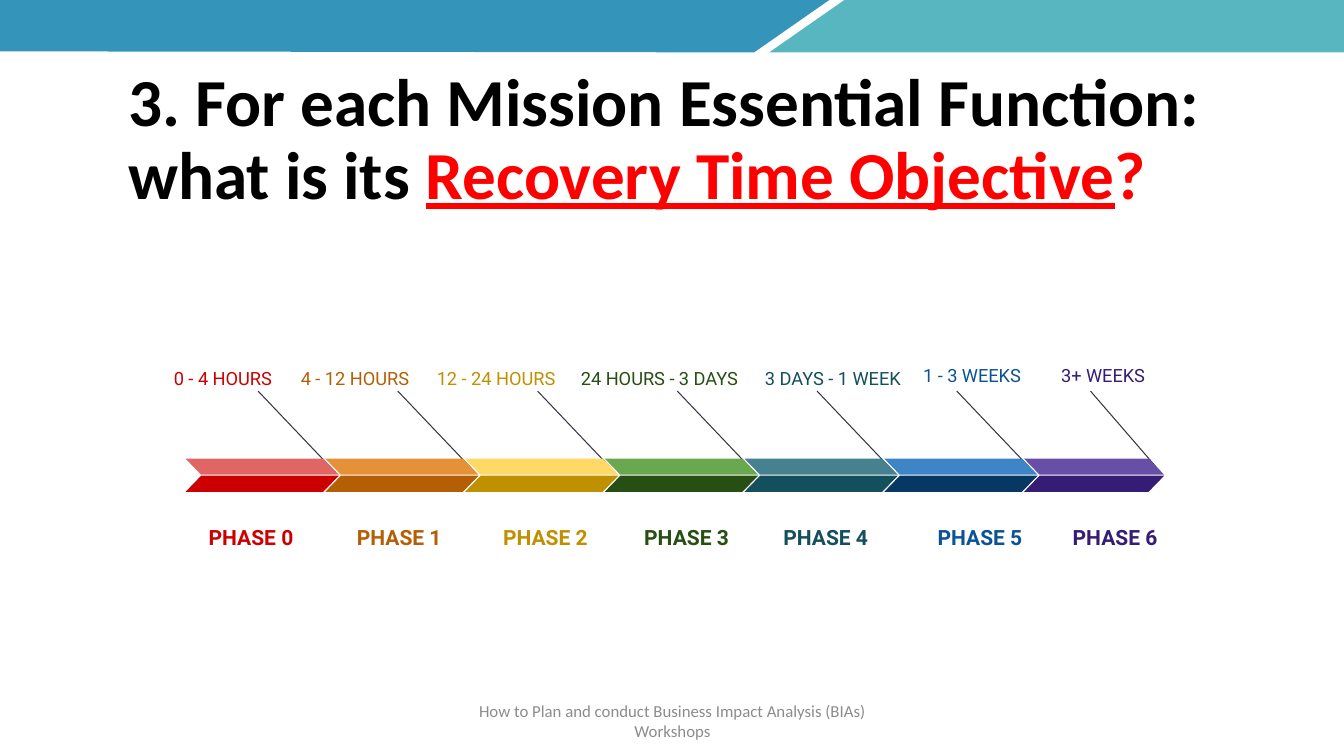
from pptx import Presentation
from pptx.dml.color import RGBColor
from pptx.enum.shapes import MSO_CONNECTOR, MSO_SHAPE
from pptx.enum.text import MSO_ANCHOR, MSO_AUTO_SIZE, PP_ALIGN
from pptx.oxml.ns import qn
from pptx.util import Inches, Pt
from lxml import etree

STRAIGHT = MSO_CONNECTOR.STRAIGHT
PARALLELOGRAM = MSO_SHAPE.PARALLELOGRAM
TOP, MIDDLE, BOTTOM = MSO_ANCHOR.TOP, MSO_ANCHOR.MIDDLE, MSO_ANCHOR.BOTTOM
LEFT, CENTER = PP_ALIGN.LEFT, PP_ALIGN.CENTER
NO_AUTOFIT = MSO_AUTO_SIZE.NONE

BLUE = RGBColor(0x34, 0x94, 0xBA)
TEAL = RGBColor(0x58, 0xB6, 0xC0)
BLACK = RGBColor(0, 0, 0)
RED = RGBColor(0xFF, 0, 0)
GRAY = RGBColor(0x8C, 0x8C, 0x8C)
SLATE = RGBColor(0x37, 0x35, 0x45)

# Light half, dark half and text colour of each phase
CRIMSON = [RGBColor.from_string(c) for c in ("E06666", "CC0000", "CC0000")]
ORANGE = [RGBColor.from_string(c) for c in ("E69138", "B45F06", "B45F06")]
GOLD = [RGBColor.from_string(c) for c in ("FFD966", "BF9000", "BF9000")]
GREEN = [RGBColor.from_string(c) for c in ("6AA84F", "274E13", "274E13")]
CYAN = [RGBColor.from_string(c) for c in ("45818E", "134F5C", "134F5C")]
NAVY = [RGBColor.from_string(c) for c in ("3D85C6", "073763", "0B5394")]
PURPLE = [RGBColor.from_string(c) for c in ("674EA7", "351C75", "351C75")]

# Colours, time span, centre of the span text, centre of the phase name
PHASES = [
    (CRIMSON, "0 - 4 HOURS", 2.21, 2.49),
    (ORANGE, "4 - 12 HOURS", 3.52, 3.96),
    (GOLD, "12 - 24 HOURS", 4.92, 5.41),
    (GREEN, "24 HOURS - 3 DAYS", 6.54, 6.81),
    (CYAN, "3 DAYS - 1 WEEK", 8.26, 8.19),
    (NAVY, "1 - 3 WEEKS", 9.64, 9.72),
    (PURPLE, "3+ WEEKS", 10.94, 11.06),
]
FIRST_LEFT, PITCH = 1.84, 1.386
BAND_WIDTH, LAST_BAND_WIDTH, BAND_HEIGHT = 1.52, 1.39, 0.16
SPAN_WIDTH, NAME_WIDTH = 1.92, 1.3


class SlideBuilder:
    heading_font = "Calibri"
    label_font = "Roboto"

    def __init__(self, slide):
        self.slide = slide
        self.shapes = slide.shapes

    def fill(self, shape, color):
        shape.shadow.inherit = False
        shape.fill.solid()
        shape.fill.fore_color.rgb = color
        shape.line.fill.background()

    def outline(self, points, color):
        corners = [(Inches(x), Inches(y)) for x, y in points]
        pen = self.shapes.build_freeform(*corners[0])
        pen.add_line_segments(corners[1:], close=True)
        self.fill(pen.convert_to_shape(), color)

    def run(self, paragraph, text, font, size, color, bold=False, underline=False):
        run = paragraph.add_run()
        run.text = text
        run.font.name = font
        run.font.size = Pt(size)
        run.font.bold = bold
        run.font.underline = underline
        run.font.color.rgb = color

    def title(self, box, parts):
        title = self.shapes.title
        title.left, title.top, title.width, title.height = map(Inches, box)
        frame = title.text_frame
        frame.word_wrap = True
        frame.auto_size = NO_AUTOFIT
        frame.vertical_anchor = TOP
        frame.margin_top = frame.margin_bottom = Inches(0.1)
        paragraph = frame.paragraphs[0]
        paragraph.alignment = LEFT
        paragraph.line_spacing = 0.9
        for text, color, underline in parts:
            self.run(paragraph, text, self.heading_font, 48, color, True, underline)

    def text(self, box, text, font, size, color, bold=False, anchor=TOP,
             spacing=1.0, margin=0.1):
        frame = self.shapes.add_textbox(*map(Inches, box)).text_frame
        frame.word_wrap = True
        frame.vertical_anchor = anchor
        frame.margin_top = frame.margin_bottom = Inches(margin)
        paragraph = frame.paragraphs[0]
        paragraph.alignment = CENTER
        paragraph.line_spacing = spacing
        self.run(paragraph, text, font, size, color, bold)

    def leader(self, start, end):
        line = self.shapes.add_connector(STRAIGHT, *map(Inches, start + end))
        line.line.color.rgb = SLATE
        line.line.width = Pt(0.75)
        etree.SubElement(line._element.spPr, qn("a:effectLst"))

    def band(self, left, top, width, color, flipped=False):
        band = self.shapes.add_shape(
            PARALLELOGRAM, *map(Inches, (left, top, width, BAND_HEIGHT)))
        band.adjustments[0] = 0.97
        self.fill(band, color)
        if flipped:
            band._element.spPr.find(qn("a:xfrm")).set("flipH", "1")

    def phase(self, number, colors, span, span_center, name_center):
        light, dark, ink = colors
        is_last = number == len(PHASES) - 1
        left = FIRST_LEFT + number * PITCH
        width = LAST_BAND_WIDTH if is_last else BAND_WIDTH
        tip = left + width - 0.03
        self.leader((tip - (0.7 if is_last else 0.77), 3.88), (tip, 4.69))
        self.band(left, 4.55, width, light, flipped=True)
        self.band(left, 4.72, width, dark)
        # The last two spans sit slightly higher, with single spacing
        spacing = 1.0 if number >= 5 else 1.15
        self.text((span_center - SPAN_WIDTH / 2, 3.51, SPAN_WIDTH, 0.64),
                  span, self.label_font, 13, ink, spacing=spacing)
        self.text((name_center - NAME_WIDTH / 2, 5.06, NAME_WIDTH, 0.49),
                  f"PHASE {number}", self.label_font, 15, ink, True, BOTTOM, 1.15)


def main():
    deck = Presentation()
    deck.slide_width, deck.slide_height = Inches(13.33), Inches(7.5)
    builder = SlideBuilder(deck.slides.add_slide(deck.slide_layouts[5]))

    # Header bands
    builder.outline([(0, 0.51), (-0.02, -0.01), (8.24, -0.01), (7.48, 0.52)], BLUE)
    builder.outline([(8.39, -0.01), (13.33, 0), (13.33, 0.52), (7.63, 0.52)], TEAL)

    # Title
    builder.title((1.17, 0.58, 11.56, 2.53), [
        ("3. For each Mission Essential Function: what is its ", BLACK, False),
        ("Recovery Time Objective", RED, True),
        ("?", RED, False),
    ])

    # Recovery timeline
    for number, details in enumerate(PHASES):
        builder.phase(number, *details)

    # Footer
    builder.text((4.42, 6.95, 4.5, 0.4),
                 "How to Plan and conduct Business Impact Analysis (BIAs) Workshops",
                 builder.heading_font, 12, GRAY, anchor=MIDDLE, margin=0.05)

    deck.save("out.pptx")


if __name__ == "__main__":
    main()
